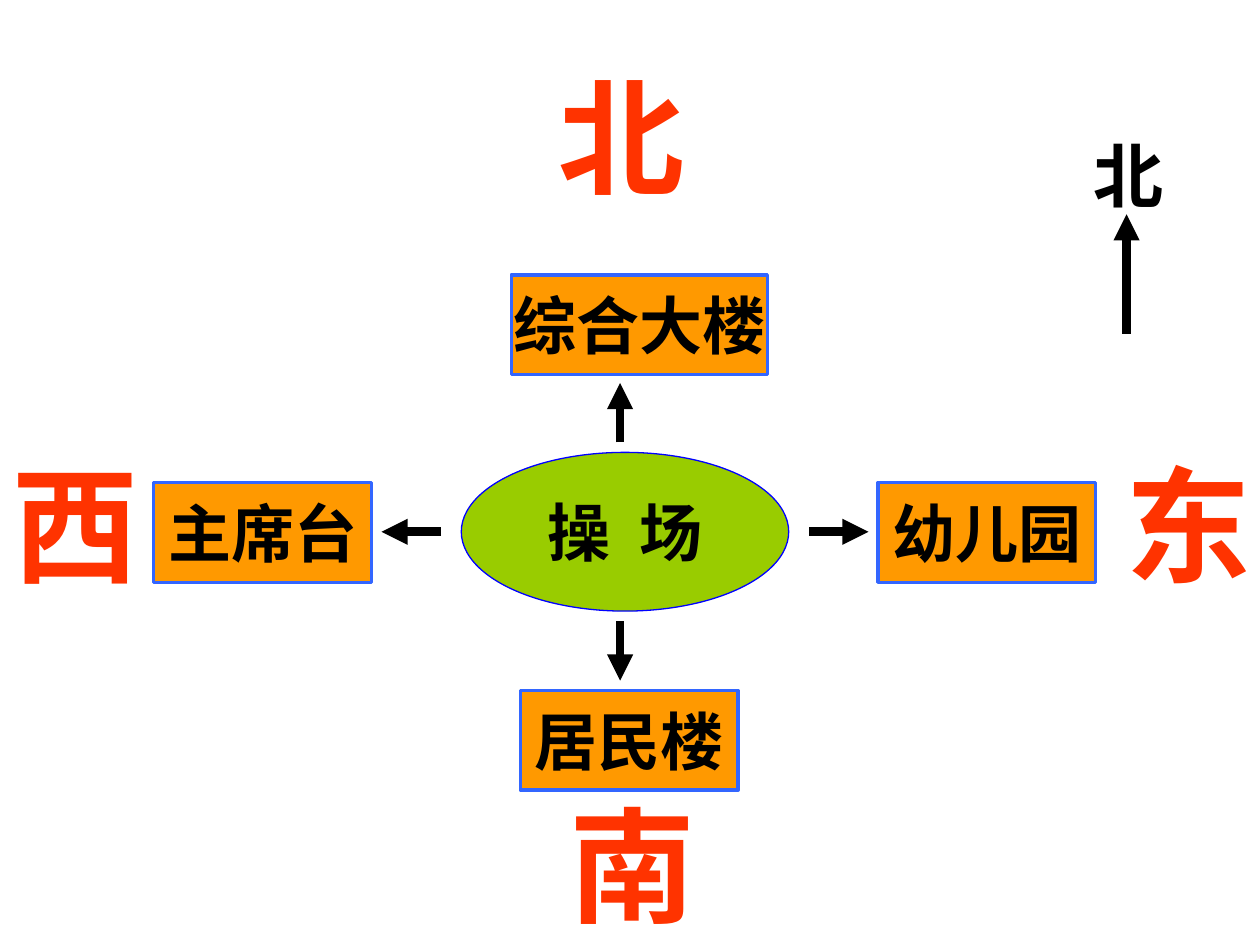
from typing import NamedTuple

import pptx
import pptx.dml.color
import pptx.enum.shapes
import pptx.enum.text
import pptx.oxml.ns
import pptx.util
from lxml import etree

Cm = pptx.util.Cm
Pt = pptx.util.Pt
SHAPE = pptx.enum.shapes.MSO_SHAPE
ALIGN = pptx.enum.text.PP_ALIGN
qn = pptx.oxml.ns.qn

COLORS = {
    "building": "FF9900",
    "building_line": "3366FF",
    "field": "99CC00",
    "field_line": "0000FF",
    "direction": "FF3300",
    "black": "000000",
}


class Place(NamedTuple):
    text: str
    left: float
    top: float
    width: float = 4.39
    height: float = 2.01
    shape: int = SHAPE.RECTANGLE
    fill: str = "building"
    line: str = "building_line"
    line_pt: float = 2


class Arrow(NamedTuple):
    x1: float
    y1: float
    x2: float
    y2: float


class Label(NamedTuple):
    text: str
    left: float
    top: float
    width: float = 4.01
    height: float = 3.3
    size: int = 72
    color: str = "direction"


def rgb(name: str) -> pptx.dml.color.RGBColor:
    return pptx.dml.color.RGBColor.from_string(COLORS[name])


def write(sp, text: str, size: int, color: str, align, frame_format: dict) -> None:
    tf = sp.text_frame
    for name, value in frame_format.items():
        setattr(tf, name, value)
    p = tf.paragraphs[0]
    p.alignment = align
    r = p.add_run()
    r.text = text
    for name, value in {"name": "Arial", "size": Pt(size), "bold": True}.items():
        setattr(r.font, name, value)
    r.font.color.rgb = rgb(color)


def draw_place(s, place: Place) -> None:
    sp = s.shapes.add_shape(place.shape, Cm(place.left), Cm(place.top),
                            Cm(place.width), Cm(place.height))
    sp.shadow.inherit = False
    sp.fill.solid()
    sp.fill.fore_color.rgb = rgb(place.fill)
    sp.line.color.rgb = rgb(place.line)
    sp.line.width = Pt(place.line_pt)
    write(sp, place.text, 36, "black", ALIGN.CENTER, {
        "word_wrap": False,
        "vertical_anchor": pptx.enum.text.MSO_ANCHOR.MIDDLE,
    })


def draw_arrow(s, arrow: Arrow) -> None:
    cxn = s.shapes.add_connector(pptx.enum.shapes.MSO_CONNECTOR.STRAIGHT,
                                 *(Cm(v) for v in arrow))
    cxn.line.color.rgb = rgb("black")
    cxn.line.width = Pt(5)
    ln = cxn.line._get_or_add_ln()
    etree.SubElement(ln, qn("a:tailEnd"), type="triangle")
    etree.SubElement(ln.getparent(), qn("a:effectLst"))


def draw_label(s, label: Label) -> None:
    sp = s.shapes.add_textbox(Cm(label.left), Cm(label.top),
                              Cm(label.width), Cm(label.height))
    write(sp, label.text, label.size, label.color, ALIGN.LEFT, {
        "word_wrap": True,
        "auto_size": pptx.enum.text.MSO_AUTO_SIZE.SHAPE_TO_FIT_TEXT,
    })


# Buildings around the sports field
PLACES = [
    Place("主席台", 3.1, 9.73),
    Place("综合大楼", 10.31, 5.54, width=5.16),
    Place("幼儿园", 17.7, 9.73),
    Place("居民楼", 10.49, 13.92),
    Place("操  场", 9.3, 9.12, 6.6, 3.2, SHAPE.OVAL, "field", "field_line", 0.75),
]

# Arrows from the field outwards, then the compass arrow
MID_X, MID_Y, REACH = 12.5, 10.72, 1.2
ARROWS = [
    Arrow(MID_X, 8.92, MID_X, 8.92 - REACH),
    Arrow(8.89, MID_Y, 8.89 - REACH, MID_Y),
    Arrow(16.31, MID_Y, 16.31 + REACH, MID_Y),
    Arrow(MID_X, 12.52, MID_X, 12.52 + REACH),
    Arrow(22.71, 6.73, 22.71, 4.32),
]

# Compass label, then the four directions
LABELS = [
    Label("北", 21.79, 2.54, 1.73, 1.96, 40, "black"),
    Label("北", 11, 1.07),
    Label("南", 11.23, 15.75),
    Label("西", 0, 8.89),
    Label("东", 22.43, 8.89, width=2.97),
]


def main() -> None:
    prs = pptx.Presentation()
    prs.slide_width, prs.slide_height = Cm(25.4), Cm(19.05)
    s = prs.slides.add_slide(prs.slide_layouts[6])
    for place in PLACES:
        draw_place(s, place)
    for arrow in ARROWS:
        draw_arrow(s, arrow)
    for label in LABELS:
        draw_label(s, label)
    prs.save("out.pptx")


if __name__ == "__main__":
    main()
